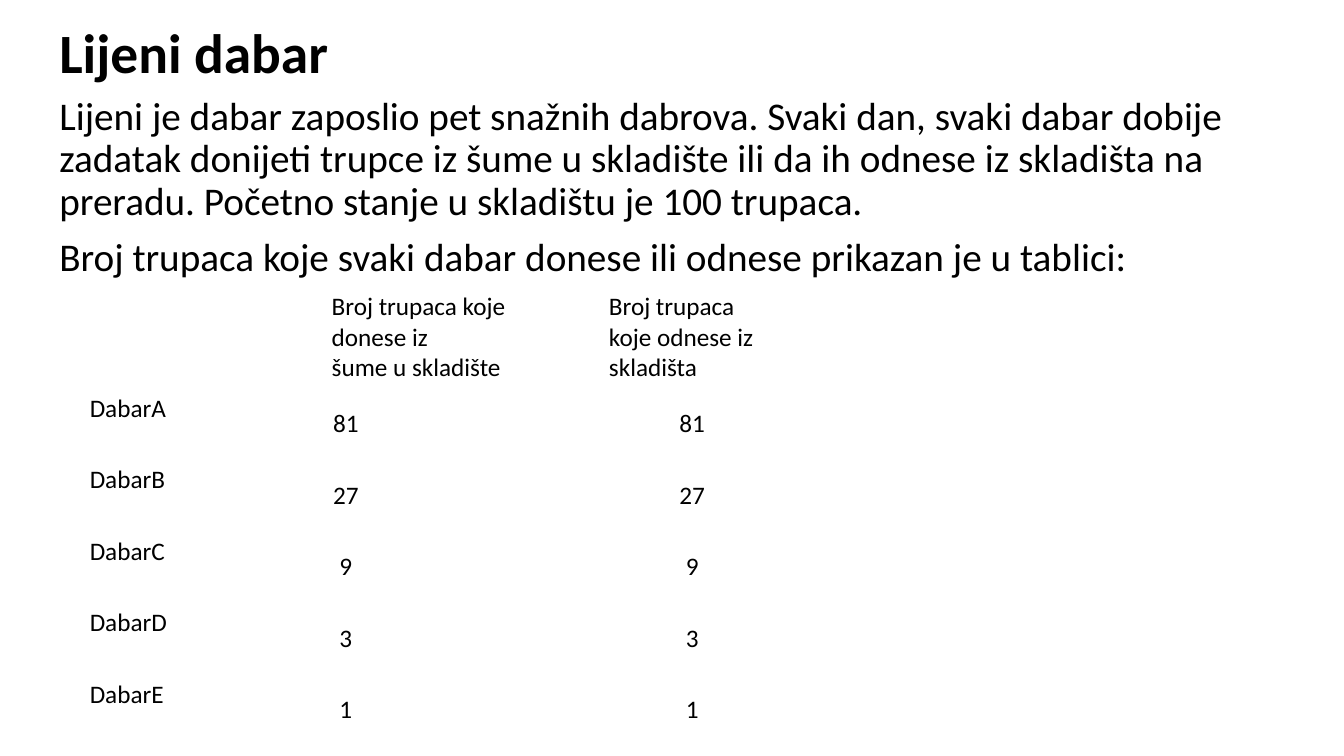
from dataclasses import dataclass

from pptx import Presentation
from pptx.dml import color
from pptx.enum import text
from pptx.util import Inches, Pt


@dataclass(frozen=True)
class Theme:
    face: str = "Calibri"
    ink: str = "000000"
    title: float = 39.6
    body: float = 28
    cell: float = 18


THEME = Theme()
MID = text.MSO_ANCHOR.MIDDLE
TOP = text.MSO_ANCHOR.TOP
LEFT = text.PP_ALIGN.LEFT
MIDDLE = text.PP_ALIGN.CENTER

STORY = [
    "Lijeni je dabar zaposlio pet snažnih dabrova. Svaki dan, svaki dabar dobije "
    "zadatak donijeti trupce iz šume u skladište ili da ih odnese iz skladišta na "
    "preradu. Početno stanje u skladištu je 100 trupaca.",
    "Broj trupaca koje svaki dabar donese ili odnese prikazan je u tablici:",
]
BRING = ["Broj trupaca koje", "donese iz", "šume u skladište"]
TAKE = ["Broj trupaca", "koje odnese iz skladišta"]
LOADS = {"DabarA": 81, "DabarB": 27, "DabarC": 9, "DabarD": 3, "DabarE": 1}
WIDTHS = [2.4, 0.48, 2.27, 1.85]
HEAD, ROW = 1.01, 0.71


def apply(item, form):
    for key, value in form.items():
        setattr(item, key, value)


def write(frame, lines, size, bold=False, **form):
    for i, line in enumerate(lines):
        para = frame.paragraphs[0] if i == 0 else frame.add_paragraph()
        apply(para, form)
        run = para.add_run()
        run.text = line
        apply(run.font, {"name": THEME.face, "size": Pt(size), "bold": bold})
        run.font.color.rgb = color.RGBColor.from_string(THEME.ink)


def add_text(slide, box, lines, size, anchor, **form):
    frame = slide.shapes.add_textbox(*map(Inches, box)).text_frame
    apply(frame, {"word_wrap": True, "vertical_anchor": anchor})
    write(frame, lines, size, line_spacing=0.9, **form)


def add_title(slide, box):
    add_text(slide, box, ["Lijeni dabar"], THEME.title, MID, bold=True)


def add_story(slide, box):
    add_text(slide, box, STORY, THEME.body, TOP, space_before=Pt(10))


def add_loads(slide, box):
    rows = len(LOADS) + 1
    grid = slide.shapes.add_table(rows, len(WIDTHS), *map(Inches, box)).table
    apply(grid, {"first_row": False, "horz_banding": False})
    for col, width in zip(grid.columns, WIDTHS):
        col.width = Inches(width)
    for i, row in enumerate(grid.rows):
        row.height = Inches(ROW if i else HEAD)
    for cell in grid.iter_cells():
        cell.fill.background()
        cell.vertical_anchor = MID

    grid.cell(0, 1).merge(grid.cell(0, 2))
    for col, lines in ((1, BRING), (3, TAKE)):
        write(grid.cell(0, col).text_frame, lines, THEME.cell, alignment=LEFT)
    for i, (name, count) in enumerate(LOADS.items(), 1):
        label = grid.cell(i, 0)
        label.vertical_anchor = TOP
        write(label.text_frame, [name], THEME.cell, alignment=LEFT)
        for col in (1, 3):
            write(grid.cell(i, col).text_frame, [str(count)], THEME.cell,
                  alignment=MIDDLE)


def main():
    deck = Presentation()
    apply(deck, {"slide_width": Inches(13.33), "slide_height": Inches(7.5)})
    slide = deck.slides.add_slide(deck.slide_layouts[6])
    add_title(slide, (0.49, 0.18, 11.5, 0.74))
    add_story(slide, (0.49, 0.91, 11.75, 1.93))
    add_loads(slide, (0.79, 2.84, sum(WIDTHS), HEAD + ROW * len(LOADS)))
    deck.save("out.pptx")


if __name__ == "__main__":
    main()
